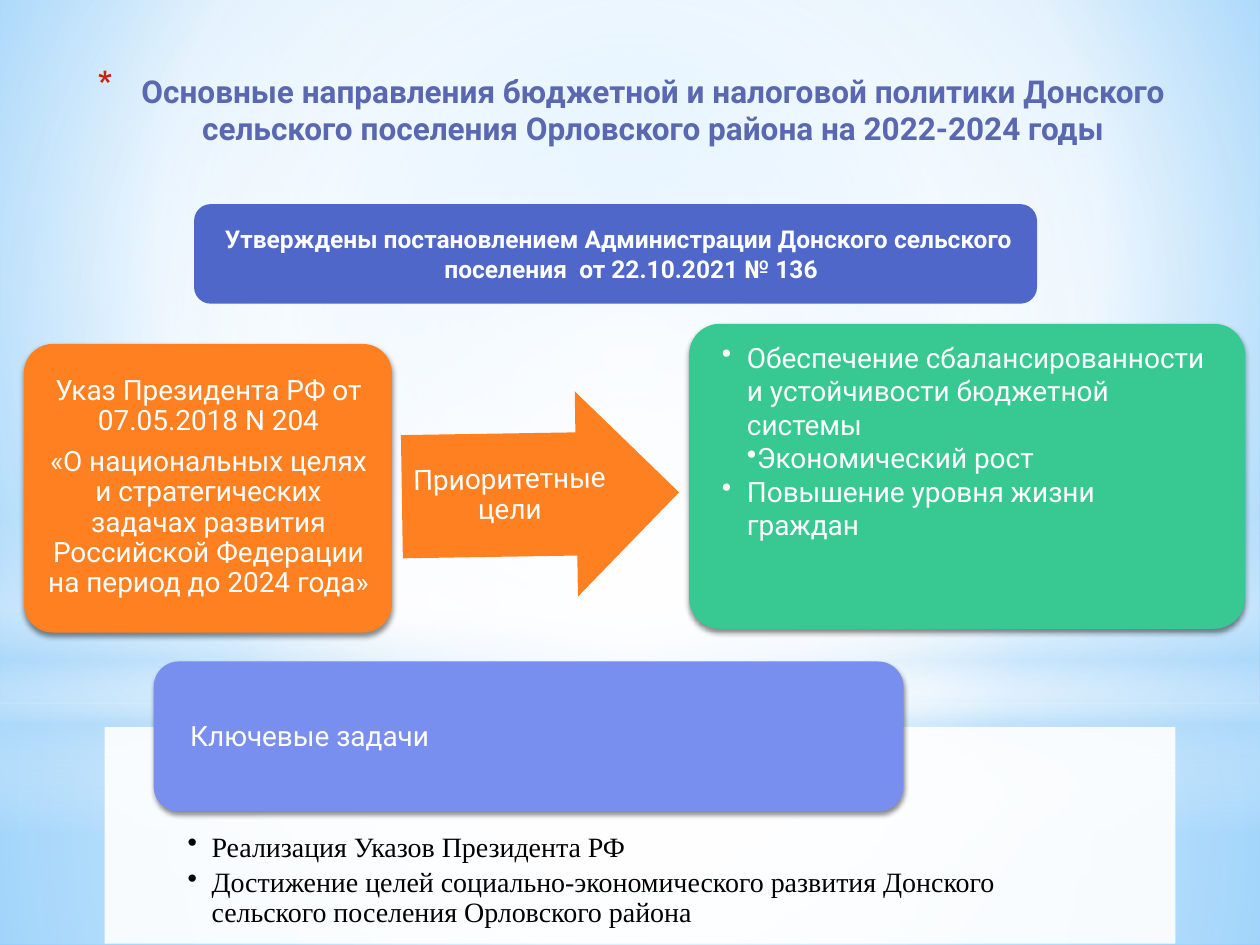
import pptx
import pptx.util
import pptx.dml.color
import pptx.enum.shapes
import pptx.enum.text
import pptx.oxml
import pptx.oxml.ns

Inches = pptx.util.Inches
Pt = pptx.util.Pt
RGBColor = pptx.dml.color.RGBColor
SHAPE = pptx.enum.shapes.MSO_SHAPE
ANCHOR = pptx.enum.text.MSO_ANCHOR
ALIGN = pptx.enum.text.PP_ALIGN
NAMESPACE = pptx.oxml.ns.nsdecls("a")

WHITE = RGBColor(0xFF, 0xFF, 0xFF)
BLACK = RGBColor(0x00, 0x00, 0x00)
PALE_BLUE = RGBColor(0xB4, 0xDC, 0xFA)
SKY = RGBColor(0x9E, 0xD5, 0xFF)
DEEP_SKY = RGBColor(0x5B, 0xB9, 0xFF)
TITLE_BLUE = RGBColor(0x59, 0x68, 0xB0)
RED = RGBColor(0xC3, 0x26, 0x0C)
INDIGO = RGBColor(0x4E, 0x67, 0xC8)
PERIWINKLE = RGBColor(0x79, 0x8F, 0xEF)
ORANGE = RGBColor(0xFF, 0x80, 0x21)
GREEN = RGBColor(0x37, 0xC9, 0x91)


def set_gradient(properties, stops, focus):
    stop_xml = "".join(
        f'<a:gs pos="{position * 1000}"><a:srgbClr val="{color}">'
        f'<a:alpha val="{alpha * 1000}"/></a:srgbClr></a:gs>'
        for position, color, alpha in stops
    )
    if focus:
        left, top, right, bottom = [side * 1000 for side in focus]
        direction = (f'<a:path path="circle"><a:fillToRect l="{left}" t="{top}" '
                     f'r="{right}" b="{bottom}"/></a:path>')
    else:
        direction = '<a:lin ang="5400000" scaled="0"/>'
    gradient = pptx.oxml.parse_xml(
        f'<a:gradFill {NAMESPACE} rotWithShape="1"><a:gsLst>{stop_xml}</a:gsLst>{direction}</a:gradFill>')
    solid = properties.find(pptx.oxml.ns.qn("a:solidFill"))
    properties.replace(solid, gradient)


def write(box, lines, size, color, font="Roboto", bold=False, align=ALIGN.LEFT,
          anchor=ANCHOR.TOP, insets=(0.1, 0.05, 0.1, 0.05), spacing=None, after=0,
          indents=(), bullet=""):
    frame = box.text_frame
    frame.word_wrap = True
    frame.vertical_anchor = anchor
    frame.margin_left, frame.margin_top, frame.margin_right, frame.margin_bottom = map(Inches, insets)
    for index, line in enumerate(lines):
        para = frame.paragraphs[0] if index == 0 else frame.add_paragraph()
        para.text = line
        para.alignment = align
        para.line_spacing = spacing
        para.space_after = Pt(after)
        properties = para._p.get_or_add_pPr()
        if indents:
            margin, first = indents[index]
            properties.set("marL", str(Inches(margin)))
            properties.set("indent", str(Inches(first)))
        if bullet == "*":
            properties.append(pptx.oxml.parse_xml(
                f'<a:buClr {NAMESPACE}><a:srgbClr val="{RED}"/></a:buClr>'))
            properties.append(pptx.oxml.parse_xml(f'<a:buSzPct {NAMESPACE} val="128000"/>'))
        if bullet:
            properties.append(pptx.oxml.parse_xml(f'<a:buChar {NAMESPACE} char="{bullet}"/>'))
        para.font.name = font
        para.font.size = Pt(size)
        para.font.bold = bold
        para.font.color.rgb = color


deck = pptx.Presentation()
deck.slide_width = Inches(10)
deck.slide_height = Inches(7.5)
page = deck.slides.add_slide(deck.slide_layouts[6])

page.background.fill.solid()
page.background.fill.fore_color.rgb = SKY
background = page._element.find(".//" + pptx.oxml.ns.qn("p:bgPr"))
set_gradient(background, [(0, SKY, 100), (60, WHITE, 100), (100, DEEP_SKY, 100)], (20, 10, 20, 60))

CENTER = (50, 50, 50, 50)
glows = [
    (SHAPE.RECTANGLE, 5.58, 1.92, CENTER,
     [(0, WHITE, 91), (37, WHITE, 76), (100, PALE_BLUE, 79)]),
    (SHAPE.RECTANGLE, 0, 5.58, CENTER,
     [(0, WHITE, 89), (48, WHITE, 62), (100, PALE_BLUE, 79)]),
    (SHAPE.RECTANGLE, 4.12, 2.5, None,
     [(0, WHITE, 0), (29, WHITE, 30), (45, PALE_BLUE, 40),
      (55, WHITE, 26), (65, PALE_BLUE, 60), (100, WHITE, 0)]),
    (SHAPE.OVAL, 1.75, 5.58, CENTER, [(0, WHITE, 100), (56, WHITE, 0)]),
]
for kind, top, height, focus, stops in glows:
    glow = page.shapes.add_shape(kind, 0, Inches(top), Inches(10), Inches(height))
    glow.shadow.inherit = False
    glow.line.fill.background()
    glow.fill.solid()
    glow.fill.fore_color.rgb = WHITE
    set_gradient(glow._element.spPr, stops, focus)

title = page.shapes.add_textbox(Inches(0.51), Inches(0.52), Inches(9), Inches(1.17))
write(title, ["Основные направления бюджетной и налоговой политики Донского "
              "сельского поселения Орловского района на 2022-2024 годы"],
      18, TITLE_BLUE, bold=True, align=ALIGN.CENTER, indents=[(0.35, -0.35)], bullet="*")

blocks = {}
for name, kind, bounds, color, adjustments, shadowed in [
    ("decree", SHAPE.ROUNDED_RECTANGLE, (1.54, 1.62, 6.69, 0.79), INDIGO, [], False),
    ("panel", SHAPE.RECTANGLE, (0.83, 5.77, 8.5, 1.72), WHITE, [], False),
    ("tasks", SHAPE.ROUNDED_RECTANGLE, (1.22, 5.25, 5.95, 1.19), PERIWINKLE, [], True),
    ("order", SHAPE.ROUNDED_RECTANGLE, (0.19, 2.73, 2.92, 2.29), ORANGE, [0.1], True),
    ("arrow", SHAPE.RIGHT_ARROW, (3.19, 3.11, 2.2, 1.63), ORANGE, [0.6, 0.5], False),
    ("goals", SHAPE.ROUNDED_RECTANGLE, (5.47, 2.57, 4.41, 2.42), GREEN, [0.1], True),
]:
    block = page.shapes.add_shape(kind, *map(Inches, bounds))
    block.fill.solid()
    block.fill.fore_color.rgb = color
    block.line.fill.background()
    block.shadow.inherit = False
    for index, value in enumerate(adjustments):
        block.adjustments[index] = value
    if shadowed:
        effects = block._element.spPr.find(pptx.oxml.ns.qn("a:effectLst"))
        effects.append(pptx.oxml.parse_xml(
            f'<a:outerShdw {NAMESPACE} blurRad="{Pt(3.1)}" dist="{Pt(1.8)}" dir="5400000" '
            f'rotWithShape="0"><a:srgbClr val="{BLACK}"><a:alpha val="45000"/></a:srgbClr></a:outerShdw>'))
    blocks[name] = block

panel_color = blocks["panel"]._element.spPr.find(".//" + pptx.oxml.ns.qn("a:srgbClr"))
panel_color.append(pptx.oxml.parse_xml(f'<a:alpha {NAMESPACE} val="90000"/>'))
blocks["arrow"].rotation = 359.1

write(blocks["decree"],
      ["Утверждены постановлением Администрации Донского сельского поселения  от 22.10.2021 № 136"],
      14, WHITE, bold=True, align=ALIGN.CENTER, anchor=ANCHOR.MIDDLE, indents=[(0.25, -0.2)])

task_list = page.shapes.add_textbox(Inches(0.83), Inches(5.77), Inches(8.5), Inches(1.72))
write(task_list, ["Реализация Указов Президента РФ",
                  "Достижение целей социально-экономического развития Донского "
                  "сельского поселения Орловского района"],
      16, BLACK, font="Times New Roman", insets=(0.66, 0.94, 0.66, 0.02),
      spacing=0.9, after=3, indents=[(0.19, -0.19)] * 2, bullet="•")

for bounds, lines, align, insets, rotation in [
    ((1.28, 5.31, 5.84, 1.08), ["Ключевые задачи"], ALIGN.LEFT, (0.23, 0, 0.23, 0), 0),
    ((0.26, 2.79, 2.79, 2.16),
     ["Указ Президента РФ от 07.05.2018 N 204",
      "«О национальных целях и стратегических задачах развития Российской Федерации "
      "на период до 2024 года»"], ALIGN.CENTER, (0.07, 0.07, 0.07, 0.07), 0),
    ((3.19, 3.44, 1.71, 0.98), ["Приоритетные цели"], ALIGN.CENTER, (0, 0, 0, 0), 359.1),
]:
    label = page.shapes.add_textbox(*map(Inches, bounds))
    label.rotation = rotation
    write(label, lines, 16, WHITE, align=align, anchor=ANCHOR.MIDDLE,
          insets=insets, spacing=0.9, after=6)

goal_list = page.shapes.add_textbox(Inches(5.63), Inches(2.65), Inches(4.09), Inches(1.72))
write(goal_list, ["Обеспечение сбалансированности и устойчивости бюджетной системы",
                  "Экономический рост", "Повышение уровня жизни граждан"],
      16, WHITE, indents=[(0.2, -0.2), (0, 0.2), (0.2, -0.2)], bullet="•")
goal_list.text_frame.auto_size = pptx.enum.text.MSO_AUTO_SIZE.SHAPE_TO_FIT_TEXT

deck.save("out.pptx")
